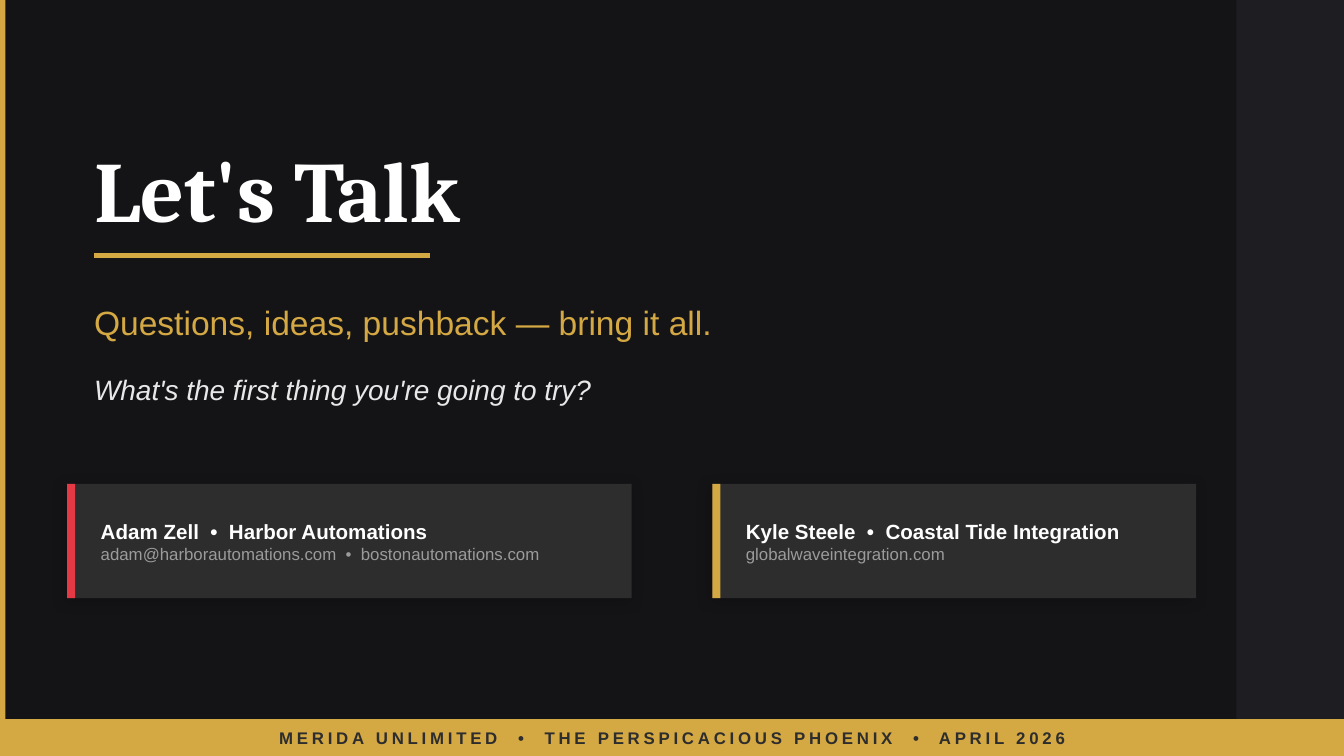
"""Build the closing slide with contact cards."""
from lxml import etree
from pptx import Presentation
from pptx import util as u
from pptx.dml.color import RGBColor
from pptx.enum import shapes, text
from pptx.oxml import parse_xml
from pptx.oxml.ns import nsdecls, qn

GOLD, RED, WHITE = "D4A843", "E63946", "FFFFFF"
NIGHT, PANEL, CHARCOAL = "141417", "1E1E22", "2D2D2D"
SILVER, GREY = "E8E8E8", "9B9B9B"
WIDTH = 10
HEIGHT = WIDTH * 9 / 16
MARGIN, TEXT_WIDTH = 0.7, 8
CARD_TOP, CARD_HEIGHT = 3.6, 0.85
FOOTER_TOP, FOOTER_HEIGHT = 5.35, 0.28


def paint(color, value):
    """Set a color format from a hex string."""
    color.rgb = RGBColor.from_string(value)


def inches(*lengths):
    """Convert numbers to lengths."""
    return [u.Inches(length) for length in lengths]


def add_block(slide, left, top, width, height, color):
    """Add a flat rectangle without outline or shadow."""
    block = slide.shapes.add_shape(
        shapes.MSO_SHAPE.RECTANGLE, *inches(left, top, width, height))
    block.shadow.inherit = False
    block.fill.solid()
    paint(block.fill.fore_color, color)
    block.line.fill.background()
    return block


def add_soft_shadow(block):
    """Give a block a faint shadow toward the lower left."""
    effects = block._element.spPr.find(qn("a:effectLst"))
    effects.append(parse_xml(
        f'<a:outerShdw {nsdecls("a")} blurRad="{u.Pt(8)}" dist="{u.Pt(2)}" '
        'dir="8100000" algn="bl" rotWithShape="0"><a:srgbClr val="000000">'
        '<a:alpha val="18000"/></a:srgbClr></a:outerShdw>'))


def format_frame(frame):
    """Wrap text, center it vertically and drop the insets."""
    frame.word_wrap = True
    frame.auto_size = text.MSO_AUTO_SIZE.NONE
    frame.vertical_anchor = text.MSO_ANCHOR.MIDDLE
    frame.margin_left = frame.margin_right = 0
    frame.margin_top = frame.margin_bottom = 0


def add_run(paragraph, words, size, color, font="Arial", bold=False, italic=False):
    """Append one formatted run."""
    run = paragraph.add_run()
    run.text = words
    run.font.name = font
    run.font.size = u.Pt(size)
    run.font.bold = bold
    run.font.italic = italic
    paint(run.font.color, color)
    return run


def add_text(slide, left, top, width, height):
    """Add an empty text box and return its frame."""
    frame = slide.shapes.add_textbox(*inches(left, top, width, height)).text_frame
    format_frame(frame)
    return frame


def add_title(slide, words):
    """Place and format the title with its underline."""
    title = slide.shapes.title
    title.left, title.top, title.width, title.height = inches(MARGIN, 1, TEXT_WIDTH, 0.8)
    format_frame(title.text_frame)
    heading = title.text_frame.paragraphs[0]
    heading.alignment = text.PP_ALIGN.LEFT
    add_run(heading, words, 46, WHITE, "Cambria", bold=True)
    rule = slide.shapes.add_connector(
        shapes.MSO_CONNECTOR.STRAIGHT, *inches(MARGIN, 1.9, MARGIN + 2.5, 1.9))
    paint(rule.line.color, GOLD)
    rule.line.width = u.Pt(2.5)
    etree.SubElement(rule._element.spPr, qn("a:effectLst"))


def add_card(slide, left, width, accent, person, contact):
    """Add a contact card with a colored edge."""
    add_soft_shadow(add_block(slide, left, CARD_TOP, width, CARD_HEIGHT, CHARCOAL))
    add_block(slide, left, CARD_TOP, 0.06, CARD_HEIGHT, accent)
    frame = add_text(slide, left + 0.25, CARD_TOP + 0.05, width - 0.4, CARD_HEIGHT - 0.1)
    add_run(frame.paragraphs[0], person, 11, WHITE, bold=True)
    add_run(frame.add_paragraph(), contact, 9, GREY)


def add_footer(slide, words):
    """Add the footer band with letter-spaced text."""
    add_block(slide, 0, FOOTER_TOP, WIDTH, FOOTER_HEIGHT, GOLD)
    line = add_text(slide, 0.5, FOOTER_TOP, WIDTH - 1, FOOTER_HEIGHT).paragraphs[0]
    line.alignment = text.PP_ALIGN.CENTER
    run = add_run(line, words, 9, CHARCOAL, bold=True)
    run.font._element.set("spc", "200")


def main():
    """Build and save the slide."""
    deck = Presentation()
    deck.slide_width, deck.slide_height = inches(WIDTH, HEIGHT)
    slide = deck.slides.add_slide(deck.slide_layouts[5])
    slide.background.fill.solid()
    paint(slide.background.fill.fore_color, NIGHT)

    add_block(slide, 0, 0, 0.04, HEIGHT, GOLD)
    add_block(slide, 9.2, 0, 0.8, HEIGHT, PANEL)
    add_title(slide, "Let's Talk")

    invitation = add_text(slide, MARGIN, 2.2, TEXT_WIDTH, 0.4)
    add_run(invitation.paragraphs[0], "Questions, ideas, pushback — bring it all.", 18, GOLD)
    question = add_text(slide, MARGIN, 2.7, TEXT_WIDTH, 0.4)
    add_run(question.paragraphs[0], "What's the first thing you're going to try?",
            15, SILVER, italic=True)

    add_card(slide, 0.5, 4.2, RED, "Adam Zell  •  Harbor Automations",
             "adam@harborautomations.com  •  bostonautomations.com")
    add_card(slide, 5.3, 3.6, GOLD, "Kyle Steele  •  Coastal Tide Integration",
             "globalwaveintegration.com")
    add_footer(slide, "MERIDA UNLIMITED  •  THE PERSPICACIOUS PHOENIX  •  APRIL 2026")
    deck.save("out.pptx")


if __name__ == "__main__":
    main()
